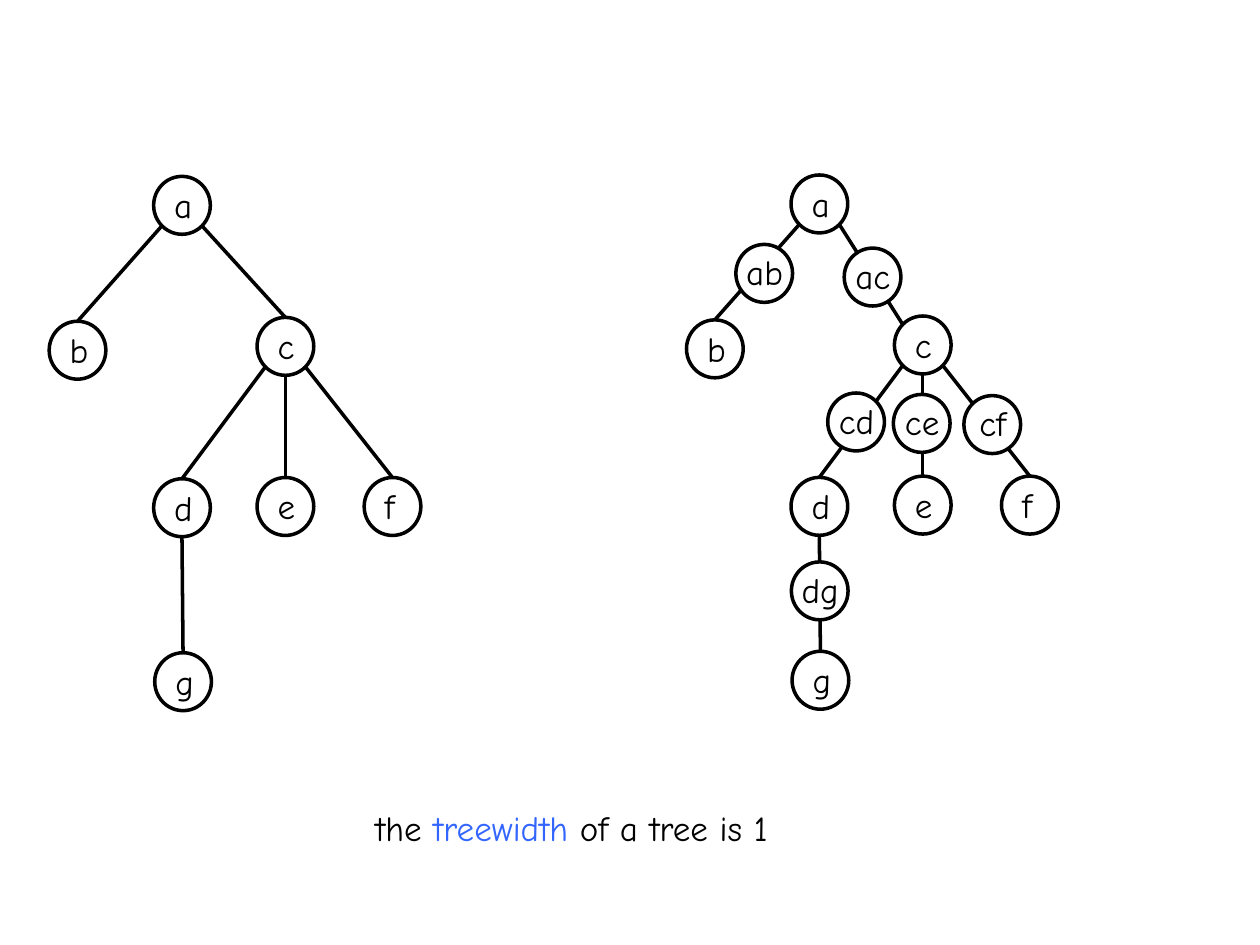
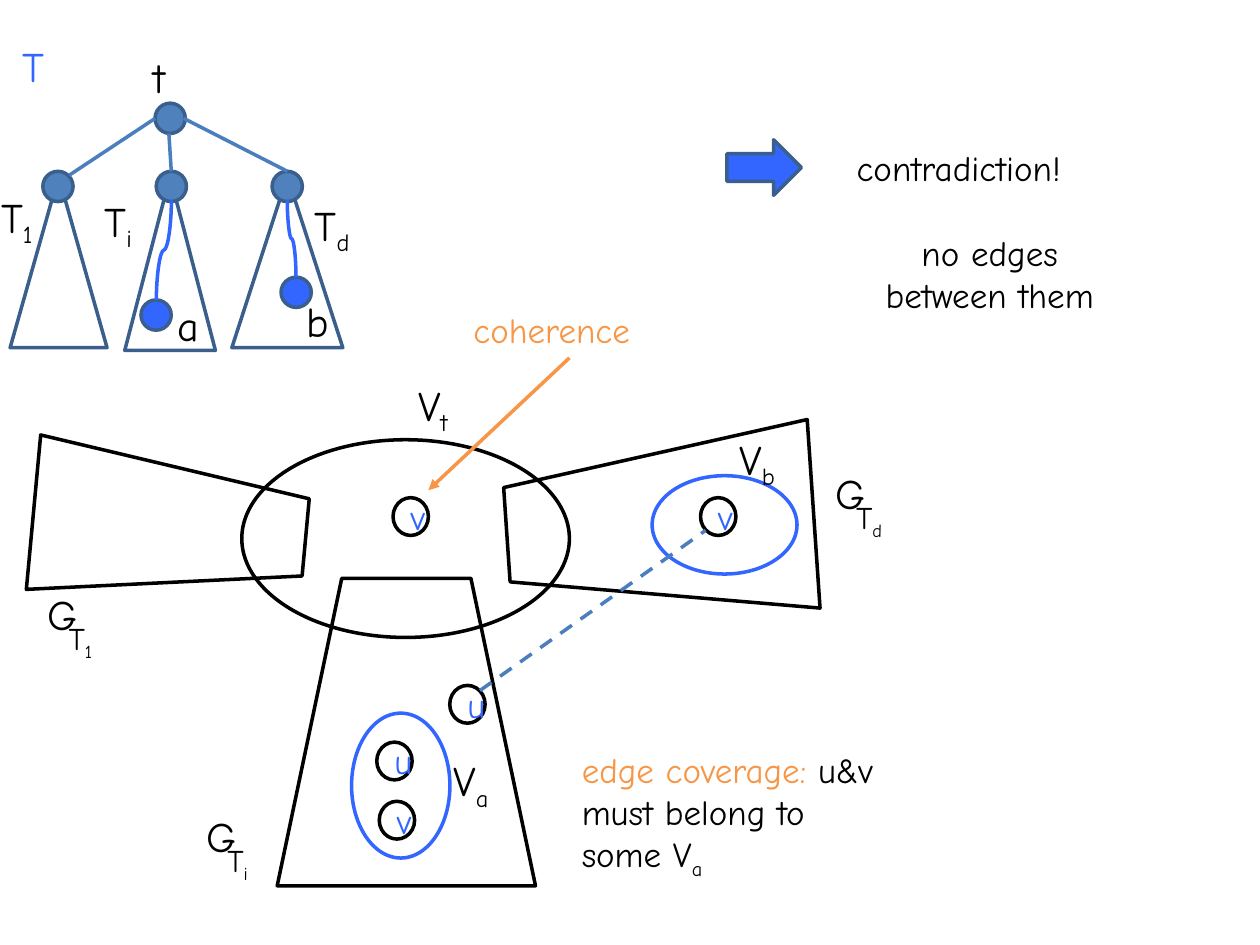
"""Build two slides on treewidth: decomposing a tree, and separating a graph at a node."""
from dataclasses import dataclass
from typing import NamedTuple

from lxml import etree
from pptx import Presentation
from pptx import util as u
from pptx.dml.color import RGBColor
from pptx.enum import dml, shapes, text
from pptx.oxml.ns import qn

FONT = "Comic Neue"
BLACK, WHITE, BLUE, ORANGE = "000000", "FFFFFF", "3366FF", "F79646"
NODE_FILL, NODE_EDGE, BRANCH = "4F81BD", "3A5F8C", "4B7EBC"
STROKE = 2
Kind = shapes.MSO_SHAPE
Point = tuple[float, float]


class Words(NamedTuple):
    """A stretch of text in one colour, optionally lowered as a subscript."""
    text: str
    color: str = BLACK
    sub: bool = False


@dataclass
class Label:
    """A text box."""
    left: float
    top: float
    width: float
    height: float
    words: list[Words]
    size: float = 20
    centered: bool = False


@dataclass
class Figure:
    """A preset outline with optional fill and rotation."""
    kind: Kind
    left: float
    top: float
    width: float
    height: float
    edge: str = BLACK
    fill: str | None = None
    rotation: float = 0


class Edge(NamedTuple):
    """A tree edge leaving one side of the parent and reaching a side of the child."""
    parent: str
    side: str
    child: str
    end: str = "top"


def rgb(color: str) -> RGBColor:
    """Turn a hex string into a colour."""
    return RGBColor.from_string(color)


def write(frame, words: list[Words], size: float, centered: bool) -> None:
    """Put coloured words into the first paragraph of a text frame."""
    paragraph = frame.paragraphs[0]
    paragraph.alignment = text.PP_ALIGN.CENTER if centered else text.PP_ALIGN.LEFT
    for part in words:
        run = paragraph.add_run()
        run.text = part.text
        run.font.name, run.font.size = FONT, u.Pt(size)
        run.font.color.rgb = rgb(part.color)
        if part.sub:
            run._r.get_or_add_rPr().set("baseline", "-25000")


def draw_label(slide, label: Label) -> None:
    """Draw a wrapping text box."""
    box = slide.shapes.add_textbox(*map(u.Pt, (label.left, label.top, label.width, label.height)))
    frame = box.text_frame
    frame.word_wrap = True
    frame.auto_size = text.MSO_AUTO_SIZE.SHAPE_TO_FIT_TEXT
    write(frame, label.words, label.size, label.centered)


def draw_figure(slide, figure: Figure):
    """Draw a preset shape and return it."""
    bounds = map(u.Pt, (figure.left, figure.top, figure.width, figure.height))
    shape = slide.shapes.add_shape(figure.kind, *bounds)
    shape.shadow.inherit = False
    shape.rotation = figure.rotation
    shape.line.color.rgb, shape.line.width = rgb(figure.edge), u.Pt(STROKE)
    if figure.fill:
        shape.fill.solid()
        shape.fill.fore_color.rgb = rgb(figure.fill)
    else:
        shape.fill.background()
    return shape


def draw_line(slide, start: Point, end: Point, color: str = BLACK,
              kind=shapes.MSO_CONNECTOR.STRAIGHT):
    """Draw a connector without shadow and return it."""
    line = slide.shapes.add_connector(kind, *map(u.Pt, (*start, *end)))
    line.line.color.rgb, line.line.width = rgb(color), u.Pt(STROKE)
    etree.SubElement(line.element.spPr, qn("a:effectLst"))
    return line


def draw_upright_curve(slide, start: Point, end: Point, color: str) -> None:
    """Draw a curve that leaves and arrives vertically, as a quarter-turned connector."""
    middle_x, middle_y = (start[0] + end[0]) / 2, (start[1] + end[1]) / 2
    turned = [(middle_x + y - middle_y, middle_y - x + middle_x) for x, y in (start, end)]
    curve = draw_line(slide, *turned, color, shapes.MSO_CONNECTOR.CURVE)
    curve.element.spPr.find(qn("a:xfrm")).set("rot", "5400000")


NODE_W, NODE_H = 32.4, 33.1
TREE = {"a": (87.8, 100.8), "b": (28.1, 183.6), "c": (146.9, 181.4), "d": (87.8, 273.6),
        "e": (146.9, 272.9), "f": (208.1, 272.9), "g": (88.4, 373)}
TREE_EDGES = [Edge("a", "lower left", "b"), Edge("a", "lower right", "c"),
              Edge("c", "lower right", "f"), Edge("c", "bottom", "e"),
              Edge("c", "lower left", "d"), Edge("d", "bottom", "g")]
BAG_TREE_EDGES = [edge._replace(end="upper left") if edge.child == "c" else edge
                  for edge in TREE_EDGES]
EDGE_BAGS = {"ab": (420.5, 139.7), "ac": (482.4, 141.8), "cd": (473, 224.6),
             "dg": (452.2, 321.1), "ce": (510.5, 225.4), "cf": (550.8, 226.1)}
SIDES = {"top": (0.5, 0), "bottom": (0.5, 1), "upper left": (0.15, 0.15),
         "lower left": (0.15, 0.85), "lower right": (0.85, 0.85)}


def draw_tree(slide, dx: float, dy: float, edges: list[Edge]) -> None:
    """Draw the lettered tree, moved by an offset."""
    nodes = {name: (x + dx, y + dy) for name, (x, y) in TREE.items()}

    def site(name: str, side: str) -> Point:
        """Locate a side of a node."""
        (x, y), (across, down) = nodes[name], SIDES[side]
        return x + across * NODE_W, y + down * NODE_H

    for name, (x, y) in nodes.items():
        draw_label(slide, Label(x + 4.7, y + 0.7, 23.8, 31.7, [Words(name)]))
        draw_figure(slide, Figure(Kind.OVAL, x, y, NODE_W, NODE_H))
    for edge in edges:
        draw_line(slide, site(edge.parent, edge.side), site(edge.child, edge.end))


def build_tree_slide(slide) -> None:
    """Show a tree beside its decomposition into bags."""
    draw_label(slide, Label(207.4, 457.2, 274.3, 31.7, [
        Words("the"), Words(" treewidth ", BLUE), Words("of a tree is 1")]))
    draw_tree(slide, 0, 0, TREE_EDGES)
    draw_tree(slide, 364.2, -0.8, BAG_TREE_EDGES)
    for name, (x, y) in EDGE_BAGS.items():
        draw_figure(slide, Figure(Kind.OVAL, x, y, NODE_W, NODE_H, fill=WHITE))
        draw_label(slide, Label(x - 7.3, y, 47.5, 31.7, [Words(name)], centered=True))


DOT = 17.3
LETTER_W, LETTER_H = 42.5, 36


class Subtree(NamedTuple):
    """A branch of T: its triangle, root dot, edge to t and label."""
    index: str
    left: float
    width: float
    height: float
    dot_left: float
    branch_from: Point
    branch_to: Point
    label_at: Point


SUBTREES = [
    Subtree("1", 5.8, 55.4, 97.9, 24.5, (39.6, 100.1), (88.6, 67.7), (-6.5, 105.8)),
    Subtree("i", 71.3, 51.8, 99.4, 89.3, (97.9, 97.9), (96.5, 76.3), (52.6, 108)),
    Subtree("d", 132.5, 63.4, 97.9, 155.5, (164.2, 97.9), (105.1, 67.7), (172.8, 110.2)),
]
REGIONS = [
    Figure(Kind.OVAL, 138.2, 251.3, 187.2, 113),
    Figure(Kind.TRAPEZOID, 158.4, 330.5, 147.6, 175.7),
    Figure(Kind.TRAPEZOID, 323.3, 211.7, 108, 175.7, rotation=266.1),
    Figure(Kind.TRAPEZOID, 52.6, 221.8, 88.6, 156.2, rotation=95.3),
]
BAGS = [Figure(Kind.OVAL, 200.9, 407.5, 56.2, 82.8, BLUE),
        Figure(Kind.OVAL, 385.9, 258.5, 56.2, 82.8, BLUE, rotation=90)]
BAG_LABELS = {"t": (231.8, 213.1), "a": (252, 427.7), "b": (415.4, 244.1)}
SUBGRAPH_LABELS = {"1": (20.2, 332.6), "i": (110.9, 459.4), "d": (470.2, 263.5)}
VERTICES = [("v", 216.7, 457.9), ("v", 400.3, 284.4), ("v", 224.6, 284.4),
            ("u", 257, 391.7), ("u", 215.3, 424.1)]


def draw_symbol(slide, at: Point, letter: str, index: str = "", color: str = BLACK) -> None:
    """Draw a large letter with an optional subscript."""
    words = [Words(letter, color)] + ([Words(index, color, True)] if index else [])
    draw_label(slide, Label(*at, LETTER_W, LETTER_H, words, 24))


def draw_dot(slide, left: float, top: float, fill: str) -> None:
    """Draw a filled tree node."""
    draw_figure(slide, Figure(Kind.OVAL, left, top, DOT, DOT, NODE_EDGE, fill))


def draw_decomposition(slide) -> None:
    """Draw the tree T with its subtrees and the nodes a and b."""
    draw_dot(slide, 88.6, 59, NODE_FILL)
    for tree in SUBTREES:
        draw_figure(slide, Figure(Kind.ISOSCELES_TRIANGLE, tree.left, 100.8,
                                  tree.width, tree.height, NODE_EDGE))
        draw_dot(slide, tree.dot_left, 97.9, NODE_FILL)
        draw_line(slide, tree.branch_from, tree.branch_to, BRANCH)
        draw_symbol(slide, tree.label_at, "T", tree.index)
    draw_symbol(slide, (5.8, 19.4), "T", color=BLUE)
    draw_symbol(slide, (80.6, 25.9), "t")
    draw_dot(slide, 160.6, 158.4, BLUE)
    draw_dot(slide, 80.6, 171.4, BLUE)
    draw_symbol(slide, (94.3, 167.8), "a")
    draw_symbol(slide, (167.8, 165.6), "b")
    draw_upright_curve(slide, (89.3, 171.4), (97.9, 114.5), BLUE)
    draw_upright_curve(slide, (169.2, 158.4), (164.2, 114.5), BLUE)


def draw_graph(slide) -> None:
    """Draw the subgraphs around V_t with their bags and vertices."""
    for figure in REGIONS + BAGS:
        draw_figure(slide, figure)
    for index, at in BAG_LABELS.items():
        draw_symbol(slide, at, "V", index)
    for index, (x, y) in SUBGRAPH_LABELS.items():
        draw_symbol(slide, (x, y), "G")
        draw_label(slide, Label(x + 11.9, y + 17.5, LETTER_W, 28.8,
                                [Words("T"), Words(index, sub=True)], 18))
    for name, x, y in VERTICES:
        vertex = draw_figure(slide, Figure(Kind.OVAL, x, y, 20.2, 21.6))
        vertex.text_frame.vertical_anchor = text.MSO_ANCHOR.MIDDLE
        write(vertex.text_frame, [Words(name, BLUE)], 20, True)
    missing_edge = draw_line(slide, (274.3, 394.6), (403.2, 303.1), BRANCH)
    missing_edge.line.dash_style = dml.MSO_LINE.DASH


def build_separation_slide(slide) -> None:
    """Show why no edge joins two different subgraphs."""
    draw_graph(slide)
    draw_decomposition(slide)
    pointer = draw_line(slide, (325.4, 204.5), (244.8, 280.1), ORANGE)
    etree.SubElement(pointer.line._get_or_add_ln(), qn("a:tailEnd"), type="triangle")
    draw_figure(slide, Figure(Kind.RIGHT_ARROW, 415.4, 79.9, 42.5, 31.7, NODE_EDGE, BLUE))
    for label in (
        Label(263.5, 172.8, 124.6, 31.7, [Words("coherence", ORANGE)]),
        Label(482.4, 79.9, 166.3, 31.7, [Words("contradiction!")]),
        Label(482.4, 128.9, 166.3, 55.4, [Words("no edges between them")], centered=True),
        Label(325.4, 424.1, 187.2, 79.9, [
            Words("edge coverage: ", ORANGE), Words("u&v must belong to some V"),
            Words("a", sub=True)]),
    ):
        draw_label(slide, label)


def main() -> None:
    """Build and save the presentation."""
    deck = Presentation()
    deck.slide_width, deck.slide_height = u.Pt(720), u.Pt(540)
    blank = deck.slide_layouts[6]
    for build in (build_tree_slide, build_separation_slide):
        build(deck.slides.add_slide(blank))
    deck.save("out.pptx")


if __name__ == "__main__":
    main()
